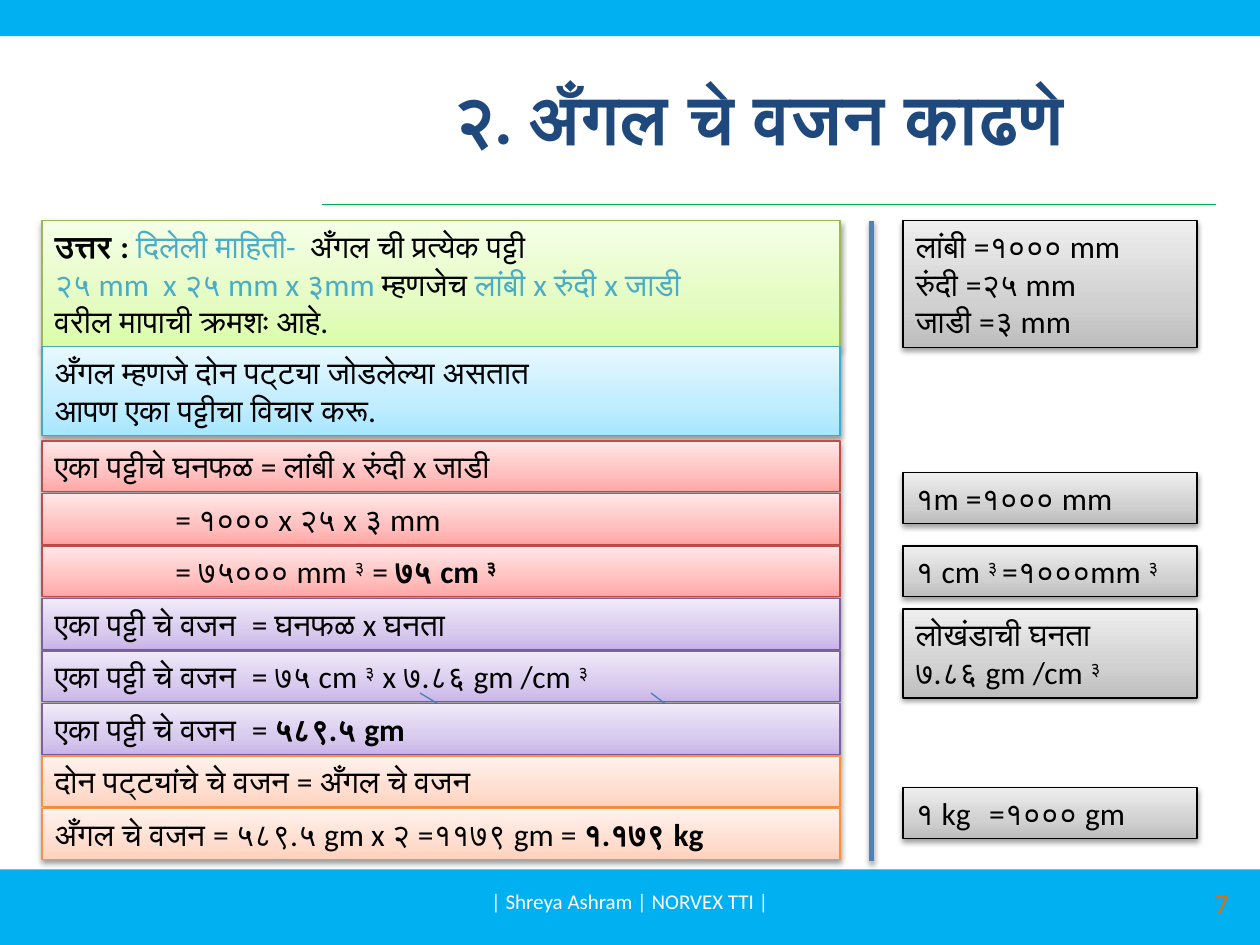
"""Builds the slide that works out the weight of an angle bar."""
from copy import deepcopy
from lxml.etree import SubElement
from pptx import Presentation
from pptx.dml.color import RGBColor
from pptx.enum.shapes import MSO_CONNECTOR, MSO_SHAPE
from pptx.enum.text import MSO_ANCHOR, MSO_AUTO_SIZE, PP_ALIGN
from pptx.oxml.ns import qn
from pptx.util import Inches, Pt

BLACK = RGBColor(0x00, 0x00, 0x00)
WHITE = RGBColor(0xFF, 0xFF, 0xFF)
NAVY = RGBColor(0x1F, 0x49, 0x7D)
SKY = RGBColor(0x00, 0xB0, 0xF0)
GREEN = RGBColor(0x00, 0xB0, 0x50)
ORANGE = RGBColor(0xE4, 0x6C, 0x0A)
AQUA = RGBColor(0x4B, 0xAC, 0xC6)
DIVIDER = RGBColor(0x4F, 0x81, 0xBD)
STRIKE = RGBColor(0x4B, 0x7E, 0xBC)


def palette(*codes):
    """Return the line colour followed by the three gradient colours."""
    return [RGBColor.from_string(code) for code in codes]


LIME = palette("98B955", "DAFDA7", "E4FCC2", "F5FFE7")
CYAN = palette("46AAC5", "A7E6FF", "C1EDFF", "E7F8FF")
RED = palette("BF4C48", "FFA6A5", "FFC0BF", "FFE7E7")
PURPLE = palette("7D60A0", "C9B5E8", "D8CBEE", "F0EAF9")
PEACH = palette("F69240", "FFD2BD", "FFDED0", "FFF2ED")
GREY = palette("000000", "BDBDBD", "D1D1D1", "EEEEEE")

CUBE = ("३", "^")
STEP_COLUMN, STEP_WIDTH = 4, 76
FACT_COLUMN, FACT_WIDTH = 86, 28


class SlideBuilder:
    """Draws on one slide with a grid of twelve units to the inch."""

    font = "Calibri"
    stops = (0, 0.35, 1)

    def __init__(self, slide):
        self.slide = slide

    def unit(self, count):
        return Inches(count / 12)

    def place(self, *lengths):
        return [self.unit(length) for length in lengths]

    def style(self, font, size, color, bold=False):
        font.name, font.size, font.bold = self.font, Pt(size), bold
        font.color.rgb = color

    def title(self, text, *place):
        heading = self.slide.shapes.title
        heading.left, heading.top, heading.width, heading.height = self.place(*place)
        frame = heading.text_frame
        frame.text = text
        frame.vertical_anchor = MSO_ANCHOR.MIDDLE
        frame.paragraphs[0].alignment = PP_ALIGN.CENTER
        self.style(frame.paragraphs[0].runs[0].font, 40, NAVY, True)

    def label(self, text, size, color, align, *place):
        frame = self.slide.shapes.add_textbox(*self.place(*place)).text_frame
        frame.word_wrap = True
        frame.vertical_anchor = MSO_ANCHOR.MIDDLE
        frame.text = text
        frame.paragraphs[0].alignment = align
        self.style(frame.paragraphs[0].runs[0].font, size, color)

    def band(self, *place):
        bar = self.slide.shapes.add_shape(MSO_SHAPE.RECTANGLE, *self.place(*place))
        bar.shadow.inherit = False
        bar.fill.solid()
        bar.fill.fore_color.rgb = SKY
        bar.line.fill.background()

    def line(self, color, width, *ends, shade=None):
        stroke = self.slide.shapes.add_connector(MSO_CONNECTOR.STRAIGHT, *self.place(*ends))
        stroke.line.color.rgb = color
        stroke.line.width = Pt(width)
        effects = SubElement(stroke._element.spPr, qn("a:effectLst"))
        if shade:
            self.shadow(effects, 1.8, shade)

    def shadow(self, effects, distance, opacity):
        outer = SubElement(effects, qn("a:outerShdw"), blurRad=str(Pt(3.15)),
                           dist=str(Pt(distance)), dir="5400000", rotWithShape="0")
        black = SubElement(outer, qn("a:srgbClr"), val="000000")
        SubElement(black, qn("a:alpha"), val=str(opacity * 1000))

    def gradient(self, shape, colors):
        shape.fill.gradient()
        stop_list = shape._element.spPr.find(".//" + qn("a:gsLst"))
        stop_list.insert(1, deepcopy(stop_list[0]))
        shape.fill.gradient_angle = 90
        for stop, position, color in zip(shape.fill.gradient_stops, self.stops, colors):
            stop.position, stop.color.rgb = position, color

    def box(self, colors, column, row, width, lines, indent=0, tab=None):
        height = 1.2 + 3.64 * len(lines)
        card = self.slide.shapes.add_shape(
            MSO_SHAPE.RECTANGLE, *self.place(column, row, width, height))
        self.gradient(card, colors[1:])
        card.line.color.rgb = colors[0]
        card.line.width = Pt(0.75)
        card.shadow.inherit = False
        self.shadow(card._element.spPr.find(qn("a:effectLst")), 1.6, 38)
        frame = card.text_frame
        frame.word_wrap = True
        frame.auto_size = MSO_AUTO_SIZE.SHAPE_TO_FIT_TEXT
        frame.vertical_anchor = MSO_ANCHOR.TOP
        frame.margin_left = self.unit(1.2 + indent)
        for index, pieces in enumerate(lines):
            paragraph = frame.add_paragraph() if index else frame.paragraphs[0]
            paragraph.alignment = PP_ALIGN.LEFT
            if tab:
                tabs = SubElement(paragraph._p.get_or_add_pPr(), qn("a:tabLst"))
                SubElement(tabs, qn("a:tab"), pos=str(self.unit(tab)), algn="l")
            self.add_pieces(paragraph, pieces)

    def add_pieces(self, paragraph, pieces):
        """Add text pieces; marks are b bold, c coloured and ^ raised."""
        for piece in [pieces] if isinstance(pieces, str) else pieces:
            text, marks = (piece, "") if isinstance(piece, str) else piece
            run = paragraph.add_run()
            run.text = text
            self.style(run.font, 18, AQUA if "c" in marks else BLACK, "b" in marks)
            if "^" in marks:
                run.font._element.set("baseline", "30000")

    def step(self, colors, row, *lines, indent=0):
        self.box(colors, STEP_COLUMN, row, STEP_WIDTH, lines, indent)

    def fact(self, row, *lines, tab=None):
        self.box(GREY, FACT_COLUMN, row, FACT_WIDTH, lines, tab=tab)


def main():
    deck = Presentation()
    deck.slide_width, deck.slide_height = Inches(10), Inches(7.5)
    page = SlideBuilder(deck.slides.add_slide(deck.slide_layouts[5]))

    page.band(0, 82.8, 120, 7.2)
    page.line(GREEN, 0.75, 30.7, 19.45, 115.8, 19.45)
    page.band(0, 0, 120, 3.45)
    page.title("२. अँगल चे वजन काढणे ", 30.7, 3.6, 85.1, 15)
    page.label("| Shreya Ashram | NORVEX TTI |", 12, WHITE, PP_ALIGN.CENTER, 41, 83.4, 38, 4.8)
    page.label("7", 16, ORANGE, PP_ALIGN.RIGHT, 90.2, 83.6, 28, 4.8)

    page.step(LIME, 21,
              [("उत्तर : ", "b"), ("दिलेली माहिती-  ", "c"), "अँगल ची प्रत्येक पट्टी"],
              [("२५ mm  x २५ mm x ३mm ", "c"), "म्हणजेच ", ("लांबी x रुंदी x जाडी", "c")],
              "वरील मापाची क्रमशः आहे.")
    page.step(CYAN, 33, "अँगल म्हणजे दोन पट्ट्या जोडलेल्या असतात",
              "आपण एका पट्टीचा विचार करू.")

    weight = "एका पट्टी चे वजन  = "
    steps = [
        (RED, 0, ["एका पट्टीचे घनफळ = लांबी x रुंदी x जाडी"]),
        (RED, 11.5, ["= १००० x २५ x ३ mm"]),
        (RED, 11.5, ["= ७५००० mm ", CUBE, " = ", ("७५ cm ", "b"), ("३", "b^")]),
        (PURPLE, 0, [weight + "घनफळ x घनता"]),
        (PURPLE, 0, [weight + "७५ cm ", CUBE, " x ७.८६ gm /cm ", CUBE]),
        (PURPLE, 0, [weight, ("५८९.५ gm", "b")]),
        (PEACH, 0, ["दोन पट्ट्यांचे चे वजन = अँगल चे वजन"]),
        (PEACH, 0, ["अँगल चे वजन = ५८९.५ gm x २ =११७९ gm = ", ("१.१७९ kg", "b")]),
    ]
    for index, (colors, indent, pieces) in enumerate(steps):
        if index == 5:
            page.line(STRIKE, 0.75, 40, 66, 45, 69)
            page.line(STRIKE, 0.75, 62, 66, 66, 69)
        page.step(colors, 42 + 5 * index, pieces, indent=indent)

    page.line(DIVIDER, 3, 83, 21, 83, 82, shade=35)
    page.fact(21, "लांबी =१००० mm", "रुंदी =२५ mm", "जाडी =३ mm")
    page.fact(45, "१m =१००० mm")
    page.fact(52, ["१ cm ", ("३ ", "^"), "=१०००mm ", CUBE])
    page.fact(58, "लोखंडाची घनता", ["७.८६ gm /cm ", CUBE])
    page.fact(75, "१ kg\t=१००० gm", tab=7)
    deck.save("out.pptx")


if __name__ == "__main__":
    main()
